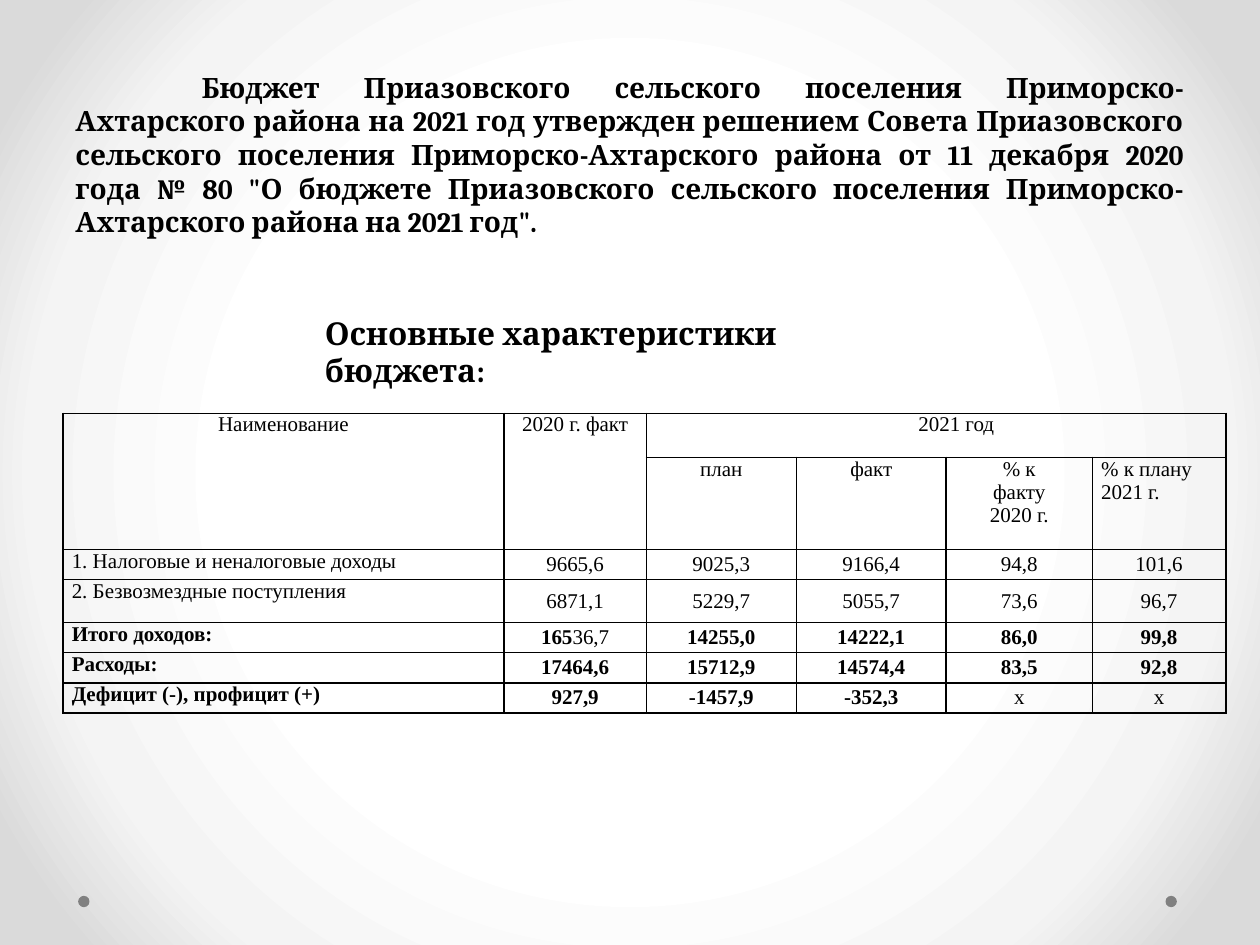
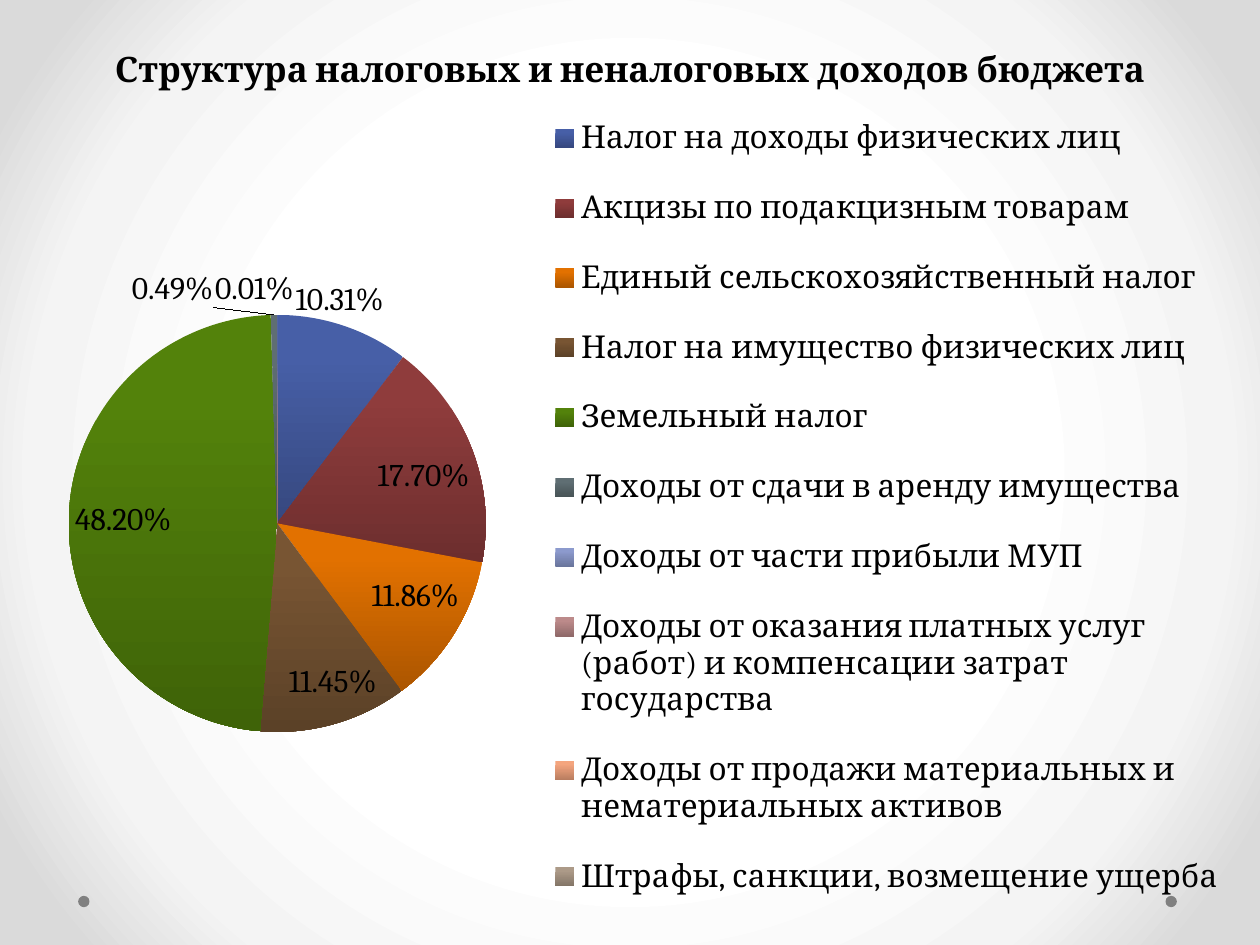
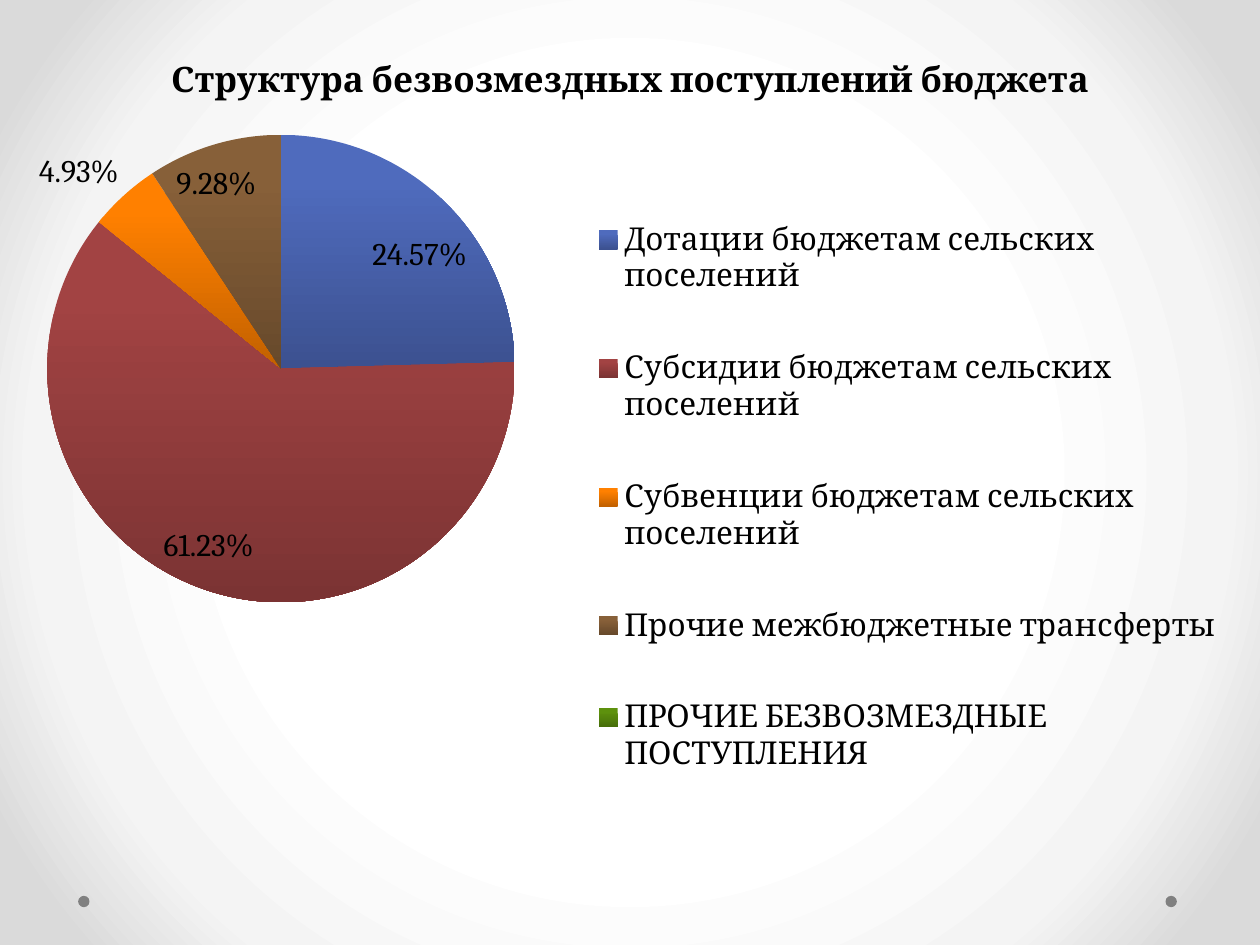
import dataclasses

import pptx
import pptx.chart.chart
import pptx.chart.data
import pptx.dml.color
import pptx.dml.fill
import pptx.enum.chart
import pptx.enum.shapes
import pptx.enum.text
import pptx.oxml
import pptx.oxml.ns
import pptx.presentation
import pptx.slide
import pptx.table
import pptx.text.text
import pptx.util
from pptx.util import Inches

HEADING_FONT = "Cambria"
TABLE_FONT = "Times New Roman"
BLACK = "000000"
DOT_GRAY = "808080"
BACKDROP_STOPS = ((50, "FFFFFF"), (76, "F4F4F4"), (92, "DADADA"))
SLICE_SHADE = 0.76
PERCENT_FORMAT = '0.00"%";;'
ALIGN = pptx.enum.text.PP_ALIGN
ANCHOR = pptx.enum.text.MSO_ANCHOR
BEST_FIT = pptx.enum.chart.XL_LABEL_POSITION.BEST_FIT

Box = tuple[float, float, float, float]


@dataclasses.dataclass(frozen=True)
class Heading:
    text: str
    box: Box
    size: int = 20
    align: ALIGN = ALIGN.CENTER
    anchor: ANCHOR = ANCHOR.BOTTOM
    line_points: int | None = None
    first_indent: float = 0


@dataclasses.dataclass(frozen=True)
class Slice:
    name: str
    percent: float
    color: str


@dataclasses.dataclass(frozen=True)
class PieSlide:
    """Lengths are in inches; plot and legend are measured within the frame."""

    heading: Heading
    frame: Box
    plot: Box
    legend: Box
    slices: tuple[Slice, ...]
    first_label_shift: float = 0


@dataclasses.dataclass(frozen=True)
class BudgetRow:
    name: str
    values: tuple[str, ...]
    height: float = 0.24
    bold: bool = False


BUDGET_HEADINGS = (
    Heading(
        "Бюджет Приазовского сельского поселения Приморско-Ахтарского района "
        "на 2021 год утвержден решением Совета Приазовского сельского поселения "
        "Приморско-Ахтарского района от 11 декабря 2020 года № 80 \"О бюджете "
        "Приазовского сельского поселения Приморско-Ахтарского района на 2021 год\".",
        (0.5, 0, 9, 1.94), size=16, align=ALIGN.JUSTIFY, first_indent=1,
    ),
    Heading("Основные характеристики бюджета:", (2.48, 2.44, 4.89, 0.4),
            size=18, align=ALIGN.LEFT, anchor=ANCHOR.TOP),
)
COLUMN_WIDTHS = (3.5, 1.13, 1.19, 1.19, 1.16, 1.06)
HEADER_HEIGHTS = (0.35, 0.73)
TOP_HEADERS = ("Наименование", "2020 г. факт", "2021 год")
YEAR_HEADERS = ("план", "факт", "% к\nфакту\n2020 г.", "% к плану\n2021 г.")
NO_VALUE = "х"
BUDGET_ROWS = (
    BudgetRow("1. Налоговые и неналоговые доходы",
              ("9665,6", "9025,3", "9166,4", "94,8", "101,6")),
    BudgetRow("2. Безвозмездные поступления",
              ("6871,1", "5229,7", "5055,7", "73,6", "96,7"), height=0.34),
    BudgetRow("Итого доходов:",
              ("165|36,7", "14255,0", "14222,1", "86,0", "99,8"), bold=True),
    BudgetRow("Расходы:",
              ("17464,6", "15712,9", "14574,4", "83,5", "92,8"), bold=True),
    BudgetRow("Дефицит (-), профицит (+)",
              ("927,9", "-1457,9", "-352,3", NO_VALUE, NO_VALUE), bold=True),
)

PIE_SLIDES = (
    PieSlide(
        Heading("Структура налоговых и неналоговых доходов бюджета",
                (0.5, 0, 9, 0.76), line_points=58),
        frame=(0, 0.6, 9.8, 6.77),
        plot=(0.03, 1.9, 4.34, 3.31),
        legend=(4.3, 0.09, 5.48, 6.68),
        first_label_shift=-0.4,
        slices=(
            Slice("Налог на доходы физических лиц", 10.31, "475FA7"),
            Slice("Акцизы по подакцизным товарам", 17.7, "8F3C3C"),
            Slice("Единый сельскохозяйственный налог", 11.86, "E27100"),
            Slice("Налог на имущество физических лиц", 11.45, "785533"),
            Slice("Земельный налог", 48.2, "53820B"),
            Slice("Доходы от сдачи в аренду имущества", 0.49, "5F6E73"),
            Slice("Доходы от части прибыли МУП", 0, "8C9ACD"),
            Slice("Доходы от оказания платных услуг (работ) и компенсации затрат "
                  "государства", 0.01, "BC8A8A"),
            Slice("Доходы от продажи материальных и нематериальных активов",
                  0, "F4A57E"),
            Slice("Штрафы, санкции, возмещение ущерба", 0, "AC9A88"),
        ),
    ),
    PieSlide(
        Heading("Структура безвозмездных поступлений бюджета",
                (0.5, 0, 9, 0.84), line_points=58),
        frame=(0, 0.6, 9.88, 6.69),
        plot=(0.13, 0.47, 4.2, 3.71),
        legend=(4.58, 0.72, 5.24, 5.25),
        slices=(
            Slice("Дотации бюджетам сельских поселений", 24.57, "4F6BBD"),
            Slice("Субсидии бюджетам сельских поселений", 61.23, "A24343"),
            Slice("Субвенции бюджетам сельских поселений", 4.93, "FF8000"),
            Slice("Прочие межбюджетные трансферты", 9.28, "876039"),
            Slice("ПРОЧИЕ БЕЗВОЗМЕЗДНЫЕ ПОСТУПЛЕНИЯ", 0, "5D910D"),
        ),
    ),
)


def rgb(color: str) -> pptx.dml.color.RGBColor:
    return pptx.dml.color.RGBColor.from_string(color)


def darker(color: str) -> str:
    channels = (int(color[i:i + 2], 16) for i in (0, 2, 4))
    return "".join(f"{round(channel * SLICE_SHADE):02X}" for channel in channels)


def inches(box: Box) -> list[pptx.util.Length]:
    return [Inches(length) for length in box]


def format_run(run: pptx.text.text._Run, font: str, size: int, bold: bool) -> None:
    run.font.name = font
    run.font.size = pptx.util.Pt(size)
    run.font.bold = bold
    run.font.color.rgb = rgb(BLACK)


def set_indent(paragraph: pptx.text.text._Paragraph, name: str, length: float) -> None:
    """Set marL (whole paragraph) or indent (first line)."""
    paragraph._p.get_or_add_pPr().set(name, str(Inches(length)))


def set_backdrop(deck: pptx.presentation.Presentation) -> None:
    """Give the master a radial gradient that every slide inherits."""
    master = deck.slide_master
    master.background.fill.solid()
    stops = "".join(
        f'<a:gs pos="{percent * 1000}"><a:srgbClr val="{color}"/></a:gs>'
        for percent, color in BACKDROP_STOPS
    )
    gradient = pptx.oxml.parse_xml(
        f'<a:gradFill {pptx.oxml.ns.nsdecls("a")} rotWithShape="1">'
        f'<a:gsLst>{stops}</a:gsLst><a:path path="circle">'
        '<a:fillToRect l="50000" t="50000" r="50000" b="50000"/>'
        '</a:path></a:gradFill>'
    )
    properties = master.element.xpath("p:cSld/p:bg/p:bgPr")[0]
    properties.replace(properties[0], gradient)


def add_slide(deck: pptx.presentation.Presentation) -> pptx.slide.Slide:
    slide = deck.slides.add_slide(deck.slide_layouts[6])
    for left in (9.25, 0.62):
        dot = slide.shapes.add_shape(
            pptx.enum.shapes.MSO_SHAPE.OVAL, *inches((left, 7.11, 0.09, 0.09)))
        dot.shadow.inherit = False
        dot.fill.solid()
        dot.fill.fore_color.rgb = rgb(DOT_GRAY)
        dot.line.fill.background()
    return slide


def add_heading(slide: pptx.slide.Slide, heading: Heading) -> None:
    frame = slide.shapes.add_textbox(*inches(heading.box)).text_frame
    frame.word_wrap = True
    frame.vertical_anchor = heading.anchor
    frame.text = heading.text
    paragraph = frame.paragraphs[0]
    paragraph.alignment = heading.align
    set_indent(paragraph, "indent", heading.first_indent)
    if heading.line_points:
        paragraph.line_spacing = pptx.util.Pt(heading.line_points)
    format_run(paragraph.runs[0], HEADING_FONT, heading.size, True)


def add_borders(cell: pptx.table._Cell) -> None:
    properties = cell._tc.get_or_add_tcPr()
    for side in ("lnL", "lnR", "lnT", "lnB"):
        properties.append(pptx.oxml.parse_xml(
            f'<a:{side} {pptx.oxml.ns.nsdecls("a")} w="12700"><a:solidFill>'
            f'<a:srgbClr val="{BLACK}"/></a:solidFill></a:{side}>'))


def write_cell(cell: pptx.table._Cell, text: str, align: ALIGN = ALIGN.CENTER,
               anchor: ANCHOR = ANCHOR.TOP, bold: bool = False) -> None:
    """Fill a cell; whatever follows a bar in the text is not bold."""
    main_text, _, plain_tail = text.partition("|")
    cell.text_frame.text = main_text
    cell.vertical_anchor = anchor
    for paragraph in cell.text_frame.paragraphs:
        paragraph.alignment = align
        format_run(paragraph.runs[0], TABLE_FONT, 12, bold)
    if plain_tail:
        tail = cell.text_frame.paragraphs[-1].add_run()
        tail.text = plain_tail
        format_run(tail, TABLE_FONT, 12, False)


def add_budget_table(slide: pptx.slide.Slide) -> None:
    heights = HEADER_HEIGHTS + tuple(row.height for row in BUDGET_ROWS)
    table = slide.shapes.add_table(
        len(heights), len(COLUMN_WIDTHS),
        *inches((0.5, 3.28, sum(COLUMN_WIDTHS), sum(heights)))).table
    table.first_row = table.horz_banding = False
    for column, width in zip(table.columns, COLUMN_WIDTHS):
        column.width = Inches(width)
    for row, height in zip(table.rows, heights):
        row.height = Inches(height)
    for cell in table.iter_cells():
        cell.margin_left = cell.margin_right = Inches(0.07)
        cell.margin_top = cell.margin_bottom = 0
        add_borders(cell)
        cell.fill.background()

    for column in (0, 1):
        table.cell(0, column).merge(table.cell(1, column))
    year_cell = table.cell(0, 2)
    year_cell.merge(table.cell(0, 5))
    for column, text in enumerate(TOP_HEADERS):
        write_cell(table.cell(0, column), text)
    set_indent(year_cell.text_frame.paragraphs[0], "marL", 0.32)
    for column, text in enumerate(YEAR_HEADERS, start=2):
        write_cell(table.cell(1, column), text,
                   ALIGN.LEFT if column == 5 else ALIGN.CENTER)

    for index, row in enumerate(BUDGET_ROWS, start=len(HEADER_HEIGHTS)):
        write_cell(table.cell(index, 0), row.name, ALIGN.LEFT, bold=row.bold)
        for column, value in enumerate(row.values, start=1):
            write_cell(table.cell(index, column), value, anchor=ANCHOR.MIDDLE,
                       bold=row.bold and value != NO_VALUE)


def set_layout(chart: pptx.chart.chart.Chart, part: str, index: int,
               content: str) -> None:
    """Place a chart part by hand; index is where its layout element belongs."""
    element = chart.element.xpath(f"c:chart/{part}")[0]
    for automatic in element.xpath("c:layout"):
        element.remove(automatic)
    element.insert(index, pptx.oxml.parse_xml(
        f'<c:layout {pptx.oxml.ns.nsdecls("c")}><c:manualLayout>{content}'
        '</c:manualLayout></c:layout>'))


def edge_layout(box: Box, frame: Box) -> str:
    """Express a box in inches as fractions of the chart frame."""
    sizes = "".join(
        f'<c:{name} val="{length / whole:.4f}"/>'
        for name, length, whole in zip("xywh", box, frame[2:] * 2))
    return f'<c:xMode val="edge"/><c:yMode val="edge"/>{sizes}'


def shade_slice(fill: pptx.dml.fill.FillFormat, color: str) -> None:
    fill.gradient()
    fill.gradient_angle = 270
    top, bottom = fill.gradient_stops
    top.position = 0.2
    top.color.rgb = rgb(color)
    bottom.color.rgb = rgb(darker(color))


def shift_first_label(chart: pptx.chart.chart.Chart, shift: float) -> None:
    """Move the first slice's label sideways by a fraction of the chart width."""
    chart.plots[0].series[0].points[0].data_label.position = BEST_FIT
    set_layout(chart, "/c:dLbl", 1, f'<c:x val="{shift:.4f}"/><c:y val="0"/>')
    label = chart.element.xpath("//c:dLbl")[0]
    label.insert(2, pptx.oxml.parse_xml(
        f'<c:numFmt {pptx.oxml.ns.nsdecls("c")} sourceLinked="0" '
        f"formatCode='{PERCENT_FORMAT}'/>"))


def add_pie(slide: pptx.slide.Slide, pie: PieSlide) -> None:
    data = pptx.chart.data.CategoryChartData()
    data.categories = [part.name for part in pie.slices]
    data.add_series("Series 1", [part.percent for part in pie.slices])
    chart = slide.shapes.add_chart(
        pptx.enum.chart.XL_CHART_TYPE.PIE, *inches(pie.frame), data).chart
    chart.has_title = False
    chart.font.name = HEADING_FONT
    chart.font.size = pptx.util.Pt(18)
    chart.font.color.rgb = rgb(BLACK)
    chart.has_legend = True
    chart.legend.position = pptx.enum.chart.XL_LEGEND_POSITION.RIGHT
    chart.legend.include_in_layout = False
    set_layout(chart, "c:plotArea", 0, '<c:layoutTarget val="inner"/>'
               + edge_layout(pie.plot, pie.frame))
    set_layout(chart, "c:legend", 1, edge_layout(pie.legend, pie.frame))

    plot = chart.plots[0]
    plot.vary_by_categories = True
    series = plot.series[0]
    for index, part in enumerate(pie.slices):
        shade_slice(series.points[index].format.fill, part.color)
    labels = series.data_labels
    labels.show_value = True
    labels.number_format = PERCENT_FORMAT
    labels.number_format_is_linked = False
    labels.position = BEST_FIT
    if pie.first_label_shift:
        shift_first_label(chart, pie.first_label_shift / pie.frame[2])


def main() -> None:
    deck = pptx.Presentation()
    deck.slide_width, deck.slide_height = Inches(10), Inches(7.5)
    set_backdrop(deck)

    budget_slide = add_slide(deck)
    for heading in BUDGET_HEADINGS:
        add_heading(budget_slide, heading)
    add_budget_table(budget_slide)

    for pie in PIE_SLIDES:
        slide = add_slide(deck)
        add_heading(slide, pie.heading)
        add_pie(slide, pie)

    deck.save("out.pptx")


if __name__ == "__main__":
    main()
